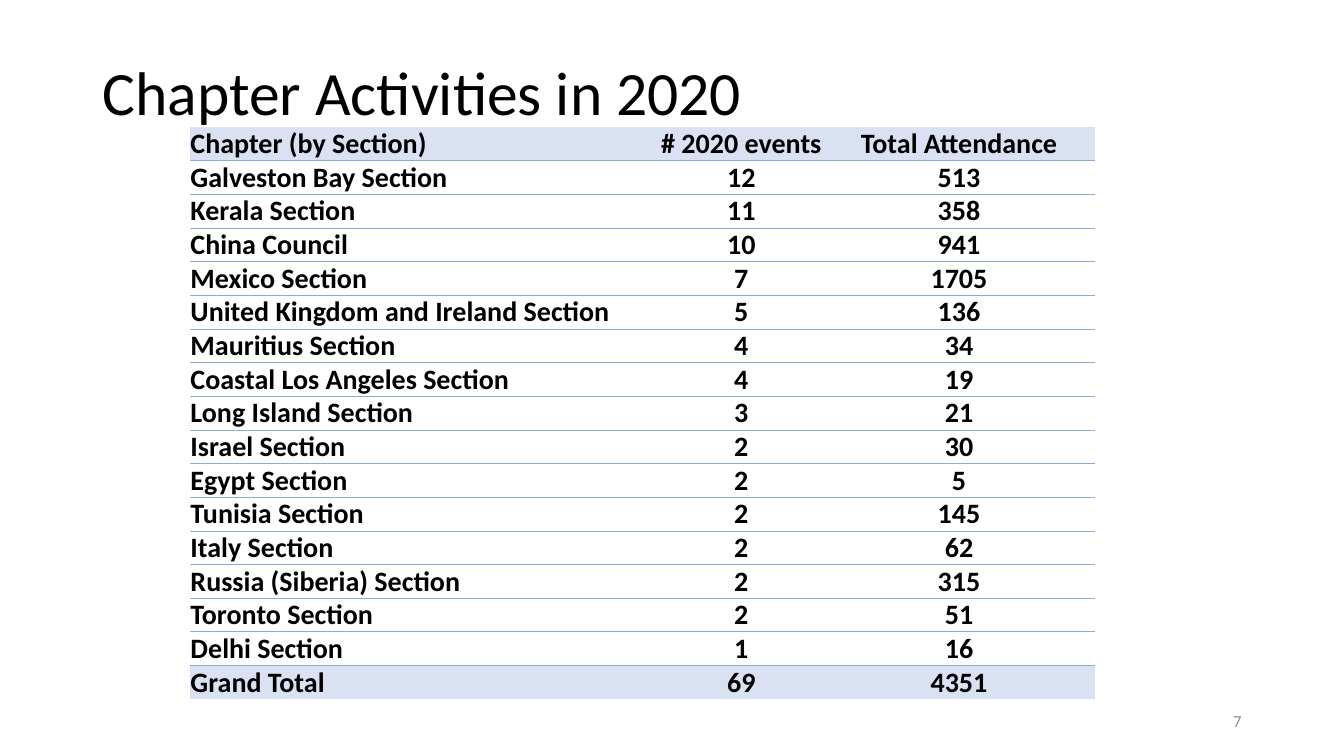
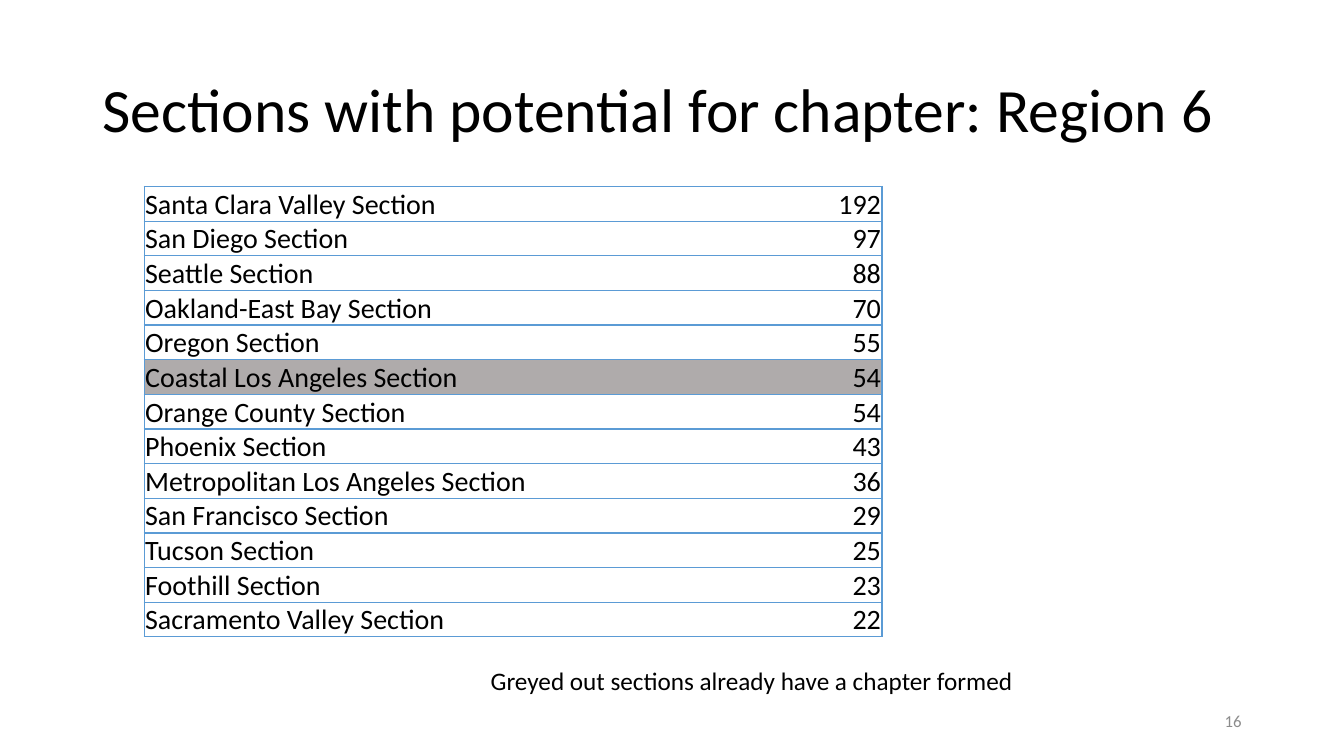
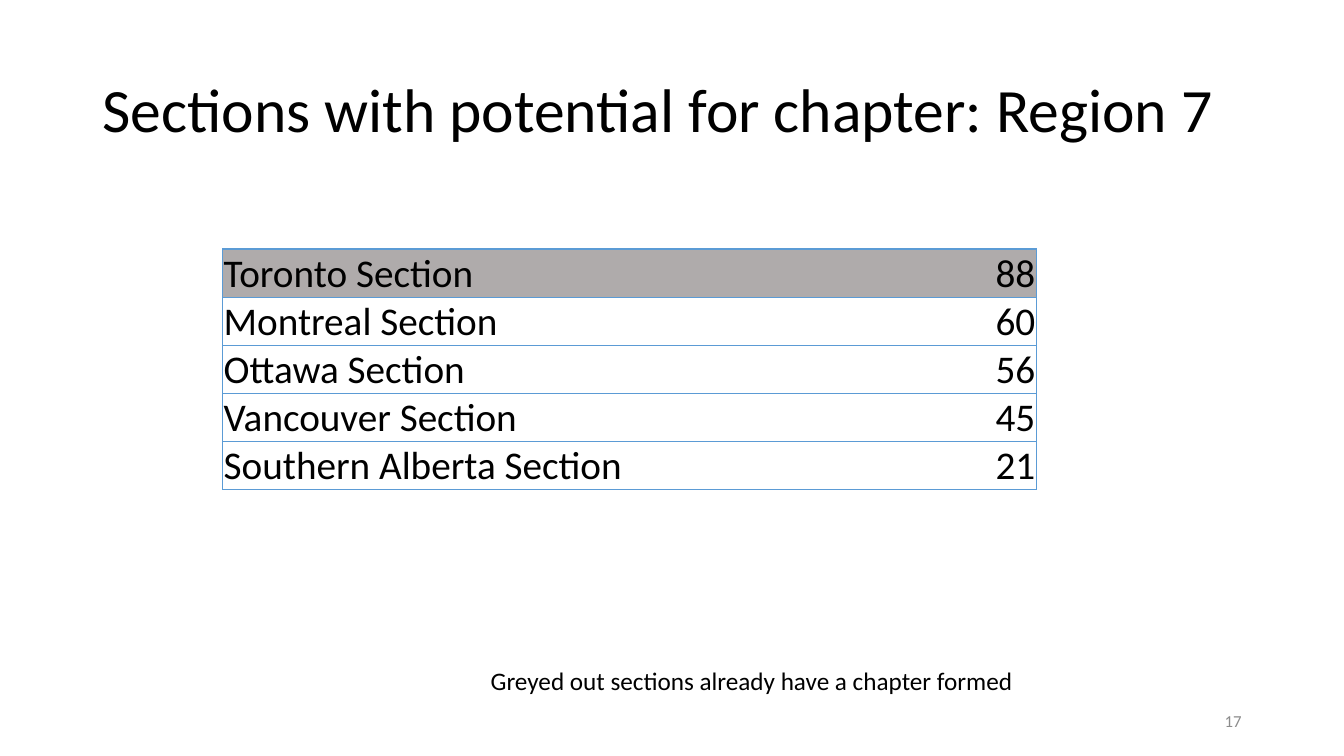
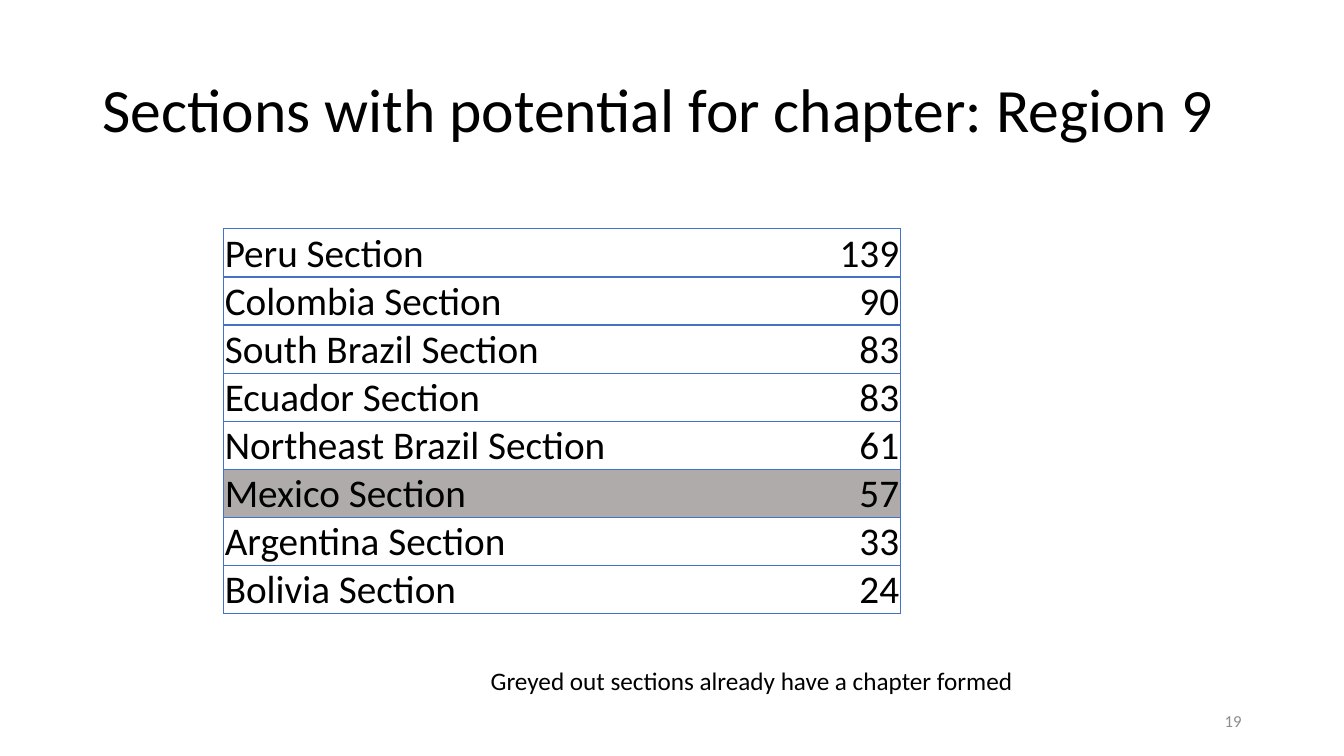
from lxml import etree
from pptx import Presentation
from pptx.dml.color import RGBColor
from pptx.enum.text import MSO_ANCHOR, MSO_AUTO_SIZE, PP_ALIGN
from pptx.oxml.ns import qn
from pptx.util import Inches, Pt

LEFT, CENTER, RIGHT = PP_ALIGN.LEFT, PP_ALIGN.CENTER, PP_ALIGN.RIGHT
TOP, MIDDLE, BOTTOM = MSO_ANCHOR.TOP, MSO_ANCHOR.MIDDLE, MSO_ANCHOR.BOTTOM
NO_FIT = MSO_AUTO_SIZE.NONE
TITLE_ONLY = 5

WIDTH, HEIGHT = Inches(13.333), Inches(7.5)
COLS, ROWS = 160, 90
FONT = "Calibri"
BLACK, WHITE, PAGE_GREY, GREYED = "000000", "FFFFFF", "8C8C8C", "AFABAB"
BAND, BAND_LINE = "D9E1F2", "8EA9DB"
SKY, BLUE = "5B9BD5", "4472C4"

PAGE_BOX = (113, 83.4, 36, 4.8)
NOTE_BOX = (57.24, 78.6, 71.04, 4.8)
NOTE = "Greyed out sections already have a chapter formed"

ACTIVITIES = [
    ("Chapter (by Section)", "# 2020 events", "Total Attendance"),
    ("Galveston Bay Section", 12, 513),
    ("Kerala Section", 11, 358),
    ("China Council", 10, 941),
    ("Mexico Section", 7, 1705),
    ("United Kingdom and Ireland Section", 5, 136),
    ("Mauritius Section", 4, 34),
    ("Coastal Los Angeles Section", 4, 19),
    ("Long Island Section", 3, 21),
    ("Israel Section", 2, 30),
    ("Egypt Section", 2, 5),
    ("Tunisia Section", 2, 145),
    ("Italy Section", 2, 62),
    ("Russia (Siberia) Section", 2, 315),
    ("Toronto Section", 2, 51),
    ("Delhi Section", 1, 16),
    ("Grand Total", 69, 4351),
]

REGIONS = [
    (6, 16, (17.16, 22.2, 87.84, 53.64), 20, SKY, "Coastal Los Angeles Section", [
        ("Santa Clara Valley Section", 192),
        ("San Diego Section", 97),
        ("Seattle Section", 88),
        ("Oakland-East Bay Section", 70),
        ("Oregon Section", 55),
        ("Coastal Los Angeles Section", 54),
        ("Orange County Section", 54),
        ("Phoenix Section", 43),
        ("Metropolitan Los Angeles Section", 36),
        ("San Francisco Section", 29),
        ("Tucson Section", 25),
        ("Foothill Section", 23),
        ("Sacramento Valley Section", 22),
    ]),
    (7, 17, (26.52, 29.64, 96.84, 28.68), 28, SKY, "Toronto Section", [
        ("Toronto Section", 88),
        ("Montreal Section", 60),
        ("Ottawa Section", 56),
        ("Vancouver Section", 45),
        ("Southern Alberta Section", 21),
    ]),
    (9, 19, (26.64, 27.24, 80.52, 45.84), 28, BLUE, "Mexico Section", [
        ("Peru Section", 139),
        ("Colombia Section", 90),
        ("South Brazil Section", 83),
        ("Ecuador Section", 83),
        ("Northeast Brazil Section", 61),
        ("Mexico Section", 57),
        ("Argentina Section", 33),
        ("Bolivia Section", 24),
    ]),
]


def rgb(color):
    return RGBColor.from_string(color)


def place(box):
    x, y, w, h = box
    return (round(x * WIDTH / COLS), round(y * HEIGHT / ROWS),
            round(w * WIDTH / COLS), round(h * HEIGHT / ROWS))


def write(tf, text, size, color=BLACK, align=LEFT, bold=False):
    p = tf.paragraphs[0]
    p.alignment = align
    r = p.add_run()
    r.text = str(text)
    r.font.name, r.font.size, r.font.bold = FONT, Pt(size), bold
    r.font.color.rgb = rgb(color)
    return p


def add_text(s, box, text, size, color=BLACK, align=LEFT, anchor=TOP):
    tf = s.shapes.add_textbox(*place(box)).text_frame
    tf.word_wrap = True
    tf.vertical_anchor = anchor
    write(tf, text, size, color, align)


def add_slide(prs, title, title_box, page):
    s = prs.slides.add_slide(prs.slide_layouts[TITLE_ONLY])
    sp = s.shapes.title
    sp.left, sp.top, sp.width, sp.height = place(title_box)
    tf = sp.text_frame
    tf.word_wrap, tf.auto_size, tf.vertical_anchor = True, NO_FIT, TOP
    write(tf, title, 44).line_spacing = 0.9
    add_text(s, PAGE_BOX, page, 12, PAGE_GREY, RIGHT, MIDDLE)
    return s


def set_borders(cell, edges, color, width):
    tc_pr = cell._tc.get_or_add_tcPr()
    for edge in "LRTB":
        ln = etree.SubElement(tc_pr, qn("a:ln" + edge), w=str(Pt(width)))
        if edge in edges:
            fill = etree.SubElement(ln, qn("a:solidFill"))
            etree.SubElement(fill, qn("a:srgbClr"), val=color)
        else:
            etree.SubElement(ln, qn("a:noFill"))


def add_grid(s, box, rows, shares, size, align, fills, line, width, inset, framed, bold=False):
    x, y, w, h = place(box)
    last_row, last_col = len(rows) - 1, len(shares) - 1
    table = s.shapes.add_table(len(rows), len(shares), x, y, w, h).table
    table.first_row = table.horz_banding = False
    for column, share in zip(table.columns, shares):
        column.width = round(w * share / sum(shares))
    for i, row in enumerate(rows):
        for j, value in enumerate(row):
            cell = table.cell(i, j)
            cell.margin_left = cell.margin_right = cell.margin_top = Inches(inset)
            cell.margin_bottom = 0
            cell.vertical_anchor = BOTTOM
            edges = {"T"} if framed or i > 0 else set()
            if framed or i < last_row:
                edges.add("B")
            if framed and j == 0:
                edges.add("L")
            if framed and j == last_col:
                edges.add("R")
            set_borders(cell, edges, line, width)
            cell.fill.solid()
            cell.fill.fore_color.rgb = rgb(fills[i])
            write(cell.text_frame, value, size, align=align if j else LEFT, bold=bold)


def activities_slide(prs):
    s = add_slide(prs, "Chapter Activities in 2020", (11, 6.84, 138, 15.36), 7)
    fills = [BAND] + [WHITE] * (len(ACTIVITIES) - 2) + [BAND]
    add_grid(s, (22.68, 15.12, 107.64, 68.04), ACTIVITIES, (4.65, 1.63, 2.69), 20,
             CENTER, fills, BAND_LINE, 0.5, 0, framed=False, bold=True)


def region_slide(prs, region, page, box, size, line, greyed, rows):
    s = add_slide(prs, f"Sections with potential for chapter: Region {region}",
                  (11, 8.88, 138, 13.2), page)
    fills = [GREYED if name == greyed else WHITE for name, _ in rows]
    add_grid(s, box, rows, (0.86, 0.14), size, RIGHT, fills, line, 1, 0.01, framed=True)
    add_text(s, NOTE_BOX, NOTE, 18)


def main():
    prs = Presentation()
    prs.slide_width, prs.slide_height = WIDTH, HEIGHT
    activities_slide(prs)
    for region in REGIONS:
        region_slide(prs, *region)
    prs.save("out.pptx")


if __name__ == "__main__":
    main()
